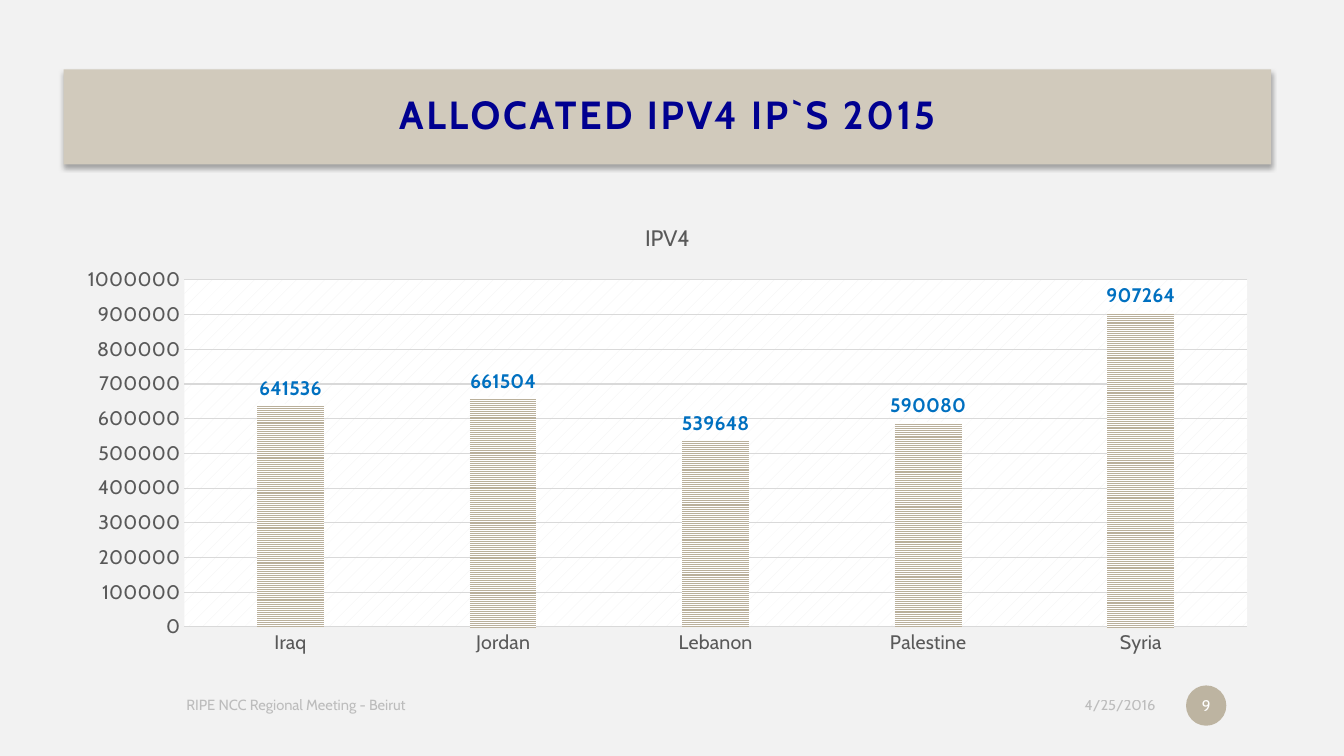
import pptx
import pptx.chart.data
import pptx.dml.color
import pptx.enum.chart
import pptx.enum.dml
import pptx.enum.shapes
import pptx.enum.text
import pptx.oxml
import pptx.oxml.ns
import pptx.util

Pt = pptx.util.Pt
ALIGN = pptx.enum.text.PP_ALIGN
PATTERN = pptx.enum.dml.MSO_PATTERN

ALLOCATIONS = {
    "Iraq": 641536,
    "Jordan": 661504,
    "Lebanon": 539648,
    "Palestine": 590080,
    "Syria": 907264,
}


def color(hex_string):
    return pptx.dml.color.RGBColor.from_string(hex_string)


def set_opacity(element, percent):
    """Make the solid colour inside an XML element partly transparent."""
    for node in element.iter(pptx.oxml.ns.qn("a:srgbClr")):
        alpha = pptx.oxml.parse_xml(
            f'<a:alpha {pptx.oxml.ns.nsdecls("a")} val="{percent * 1000}"/>')
        node.append(alpha)


def set_pattern(fill, pattern, foreground, background="FFFFFF"):
    fill.patterned()
    fill.pattern = pattern
    fill.fore_color.rgb = color(foreground)
    fill.back_color.rgb = color(background)


class SlideBuilder:
    font_name = "Cabin"
    accent = "BAB09B"
    muted = "A6A6A6"
    chart_text = "595959"
    rule = "D9D9D9"

    def __init__(self, presentation):
        self.slide = presentation.slides.add_slide(presentation.slide_layouts[5])
        fill = self.slide.background.fill
        fill.solid()
        fill.fore_color.rgb = color("F2F2F2")

    def style_font(self, font, size, hex_string, bold=False):
        font.name = self.font_name
        font.size = Pt(size)
        font.bold = bold
        font.color.rgb = color(hex_string)

    def set_text(self, shape, text, size, hex_string, align, bold=False, insets=(7.2, 3.6)):
        frame = shape.text_frame
        frame.word_wrap = True
        frame.auto_size = pptx.enum.text.MSO_AUTO_SIZE.NONE
        frame.vertical_anchor = pptx.enum.text.MSO_ANCHOR.MIDDLE
        frame.margin_left = frame.margin_right = Pt(insets[0])
        frame.margin_top = frame.margin_bottom = Pt(insets[1])
        frame.text = text
        paragraph = frame.paragraphs[0]
        paragraph.alignment = align
        self.style_font(paragraph.font, size, hex_string, bold)
        return paragraph

    def title(self, text, left, top, width, height):
        shape = self.slide.shapes.title
        shape.left, shape.top = Pt(left), Pt(top)
        shape.width, shape.height = Pt(width), Pt(height)
        shape.fill.solid()
        shape.fill.fore_color.rgb = color("D1CABC")
        shape.line.fill.background()
        paragraph = self.set_text(shape, text, 28, "000090", ALIGN.CENTER, True, (14.4, 14.4))
        paragraph.line_spacing = 0.9
        paragraph.font._element.set("spc", "200")
        shape.shadow.inherit = False
        effects = shape._element.spPr.find(pptx.oxml.ns.qn("a:effectLst"))
        effects.append(pptx.oxml.parse_xml(
            f'<a:outerShdw {pptx.oxml.ns.nsdecls("a")} blurRad="{Pt(3.5)}" '
            f'dist="{Pt(2.2)}" dir="5400000"><a:srgbClr val="000000"/></a:outerShdw>'))
        set_opacity(effects, 32)

    def footer(self, text, left, top, width, height, align):
        box = self.slide.shapes.add_textbox(Pt(left), Pt(top), Pt(width), Pt(height))
        paragraph = self.set_text(box, text, 10.5, self.muted, align)
        set_opacity(paragraph.font._element, 70)

    def page_badge(self, text, left, top, size):
        badge = self.slide.shapes.add_shape(
            pptx.enum.shapes.MSO_SHAPE.OVAL, Pt(left), Pt(top), Pt(size), Pt(size))
        badge.shadow.inherit = False
        badge.fill.solid()
        badge.fill.fore_color.rgb = color(self.accent)
        set_opacity(badge._element.spPr, 93)
        badge.line.fill.background()
        self.set_text(badge, text, 11, "FFFFFF", ALIGN.CENTER, insets=(1.44, 3.6))

    def column_chart(self, name, values, left, top, width, height):
        data = pptx.chart.data.CategoryChartData()
        data.categories = list(values)
        data.add_series(name, list(values.values()))
        chart = self.slide.shapes.add_chart(
            pptx.enum.chart.XL_CHART_TYPE.COLUMN_CLUSTERED,
            Pt(left), Pt(top), Pt(width), Pt(height), data).chart
        self.style_font(chart.font, 10, "000000")
        chart.has_legend = False
        chart.has_title = True
        chart.chart_title.include_in_layout = False
        chart.chart_title.text_frame.text = name
        heading = chart.chart_title.text_frame.paragraphs[0]
        self.style_font(heading.font, 16, self.chart_text)

        for axis in (chart.category_axis, chart.value_axis):
            axis.major_tick_mark = pptx.enum.chart.XL_TICK_MARK.NONE
            axis.minor_tick_mark = pptx.enum.chart.XL_TICK_MARK.NONE
            self.style_font(axis.tick_labels.font, 14, self.chart_text)
        chart.value_axis.minimum_scale = 0
        chart.value_axis.maximum_scale = 1000000
        chart.value_axis.major_unit = 100000
        chart.value_axis.format.line.fill.background()
        chart.value_axis.has_major_gridlines = True
        for line in (chart.category_axis.format.line,
                     chart.value_axis.major_gridlines.format.line):
            line.color.rgb = color(self.rule)
            line.width = Pt(0.75)

        plot = chart.plots[0]
        plot.gap_width = 219
        plot.overlap = -27
        plot.vary_by_categories = False
        series = plot.series[0]
        series.invert_if_negative = False
        set_pattern(series.format.fill, PATTERN.NARROW_HORIZONTAL, self.accent)
        labels = series.data_labels
        labels.show_value = True
        labels.position = pptx.enum.chart.XL_LABEL_POSITION.OUTSIDE_END
        self.style_font(labels.font, 14, "0070C0", True)

        plot_properties = pptx.oxml.parse_xml(
            f'<c:spPr {pptx.oxml.ns.nsdecls("c", "a")}><a:pattFill prst="pct5">'
            '<a:fgClr><a:srgbClr val="F2F2F2"/></a:fgClr>'
            '<a:bgClr><a:srgbClr val="FFFFFF"/></a:bgClr></a:pattFill></c:spPr>')
        chart._chartSpace.chart.plotArea.append(plot_properties)


def main():
    presentation = pptx.Presentation()
    presentation.slide_width, presentation.slide_height = Pt(960), Pt(540)
    builder = SlideBuilder(presentation)
    builder.title("ALLOCATED IPV4 IP`S 2015", 45.5, 49.5, 862.5, 68)
    builder.column_chart("IPV4", ALLOCATIONS, 45.5, 146, 862.5, 328.5)
    builder.footer("4/25/2016", 615.5, 491, 217, 25.2, ALIGN.RIGHT)
    builder.footer("RIPE NCC Regional Meeting - Beirut", 126, 491, 464.5, 25.2, ALIGN.LEFT)
    builder.page_badge("9", 847.2, 489.6, 28.8)
    presentation.save("out.pptx")


if __name__ == "__main__":
    main()
